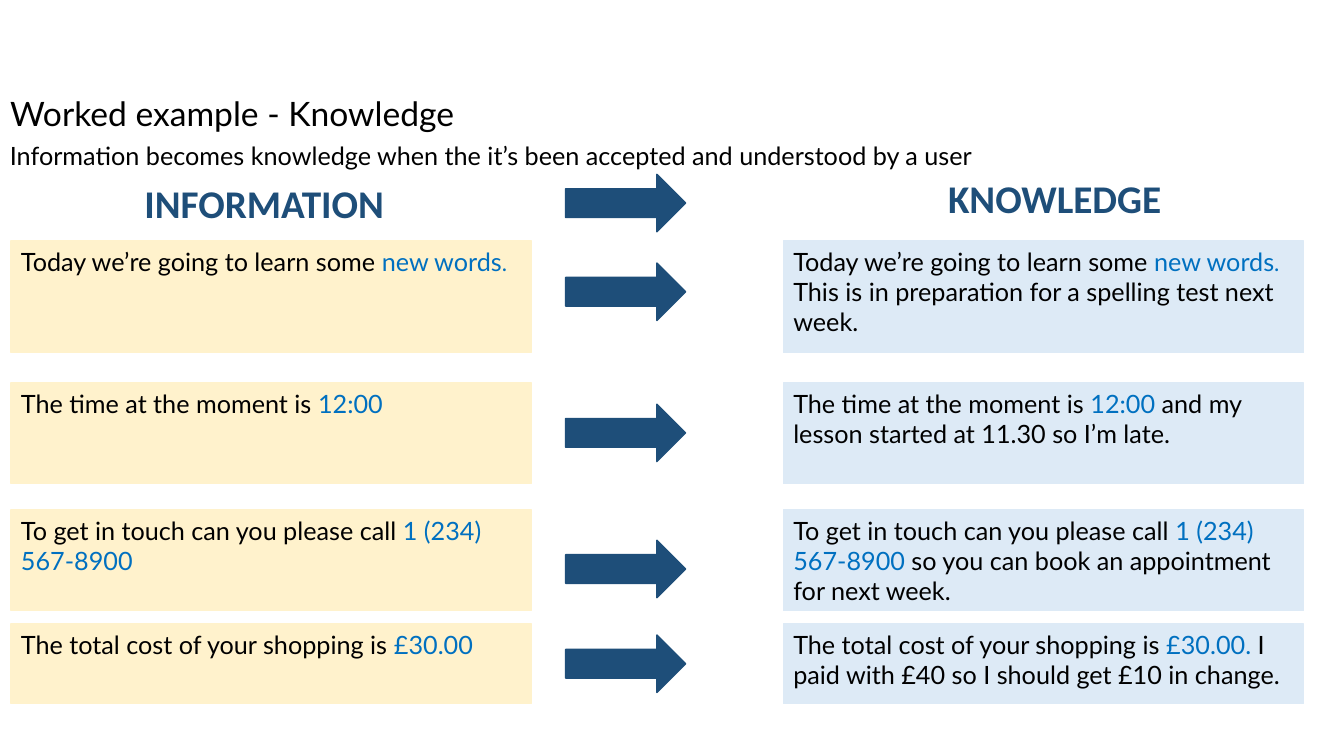
"""Build the worked example slide that turns information into knowledge."""
from dataclasses import dataclass

from pptx import Presentation
from pptx import util as u
from pptx.dml.color import RGBColor
from pptx.enum import shapes, text


@dataclass(frozen=True)
class Theme:
    ink: str = "000000"
    accent: str = "0070C0"
    navy: str = "1E4E79"
    information: str = "FFF2CC"
    knowledge: str = "DDEAF6"
    body_font: str = "Lato"
    heading_font: str = "Calibri"
    title_size: int = 24
    heading_size: int = 28
    body_size: int = 18
    stop_size: int = 16


theme = Theme()


def write(shape, runs, font=theme.body_font, bold=False, align=text.PP_ALIGN.LEFT):
    """Fill a shape with one top-anchored paragraph of (words, size, colour) runs."""
    frame = shape.text_frame
    frame.word_wrap = True
    frame.auto_size = text.MSO_AUTO_SIZE.NONE
    frame.vertical_anchor = text.MSO_ANCHOR.TOP
    paragraph = frame.paragraphs[0]
    paragraph.alignment = align
    paragraph.line_spacing = 1.0
    for words, size, colour in runs:
        run = paragraph.add_run()
        run.text = words
        run.font.name = font
        run.font.size = u.Pt(size)
        run.font.bold = bold
        run.font.color.rgb = RGBColor.from_string(colour)


def add_block(slide, kind, left, top, width, height, colour):
    """Add a flat preset shape whose line matches its fill."""
    shape = slide.shapes.add_shape(
        kind, u.Inches(left), u.Inches(top), u.Inches(width), u.Inches(height))
    shape.shadow.inherit = False
    shape.fill.solid()
    shape.fill.fore_color.rgb = RGBColor.from_string(colour)
    shape.line.color.rgb = RGBColor.from_string(colour)
    shape.line.width = u.Pt(1)
    return shape


presentation = Presentation()
presentation.slide_width = u.Inches(13.33)
presentation.slide_height = u.Inches(7.5)
slide = presentation.slides.add_slide(presentation.slide_layouts[5])

title = slide.shapes.title
title.left, title.top = u.Inches(0), u.Inches(0.87)
title.width, title.height = u.Inches(6.2), u.Inches(0.5)
write(title, [("Worked example - Knowledge", theme.title_size, theme.ink)])

subtitle = slide.shapes.add_textbox(
    u.Inches(0), u.Inches(1.34), u.Inches(12.36), u.Inches(0.4))
write(subtitle, [("Information becomes knowledge when the it’s been accepted and "
                  "understood by a user", theme.body_size, theme.ink)])

for words, left, top, width in [("INFORMATION", 1.26, 1.73, 2.72),
                                ("KNOWLEDGE", 8.98, 1.68, 2.96)]:
    heading = slide.shapes.add_textbox(
        u.Inches(left), u.Inches(top), u.Inches(width), u.Inches(0.57))
    write(heading, [(words, theme.heading_size, theme.navy)],
          font=theme.heading_font, bold=True, align=text.PP_ALIGN.CENTER)

for arrow_top in (1.73, 2.61, 4.01, 5.36, 6.3):
    add_block(slide, shapes.MSO_SHAPE.RIGHT_ARROW, 5.61, arrow_top, 1.19, 0.57, theme.navy)

examples = [
    (2.39, 1.11, "Today we’re going to learn some ", "new words", ".",
     "This is in preparation for a spelling test next week."),
    (3.8, 1, "The time at the moment is ", "12:00", "",
     "and my lesson started at 11.30 so I’m late."),
    (5.06, 1, "To get in touch can you please call ", "1 (234) 567-8900", "",
     "so you can book an appointment for next week."),
    (6.19, 0.79, "The total cost of your shopping is ", "£30.00", "",
     "I paid with £40 so I should get £10 in change."),
]

for top, height, lead, fact, stop, context in examples:
    information = [(lead, theme.body_size, theme.ink), (fact, theme.body_size, theme.accent)]
    if stop:
        information.append((stop, theme.stop_size, theme.accent))
    link = ". " if fact.startswith("£") else " "
    knowledge = information + [(link, theme.stop_size if stop else theme.body_size, theme.accent),
                               (context, theme.body_size, theme.ink)]
    for left, colour, runs in [(0.11, theme.information, information),
                               (7.77, theme.knowledge, knowledge)]:
        box = add_block(slide, shapes.MSO_SHAPE.RECTANGLE, left, top, 5.16, height, colour)
        write(box, runs)

presentation.save("out.pptx")
